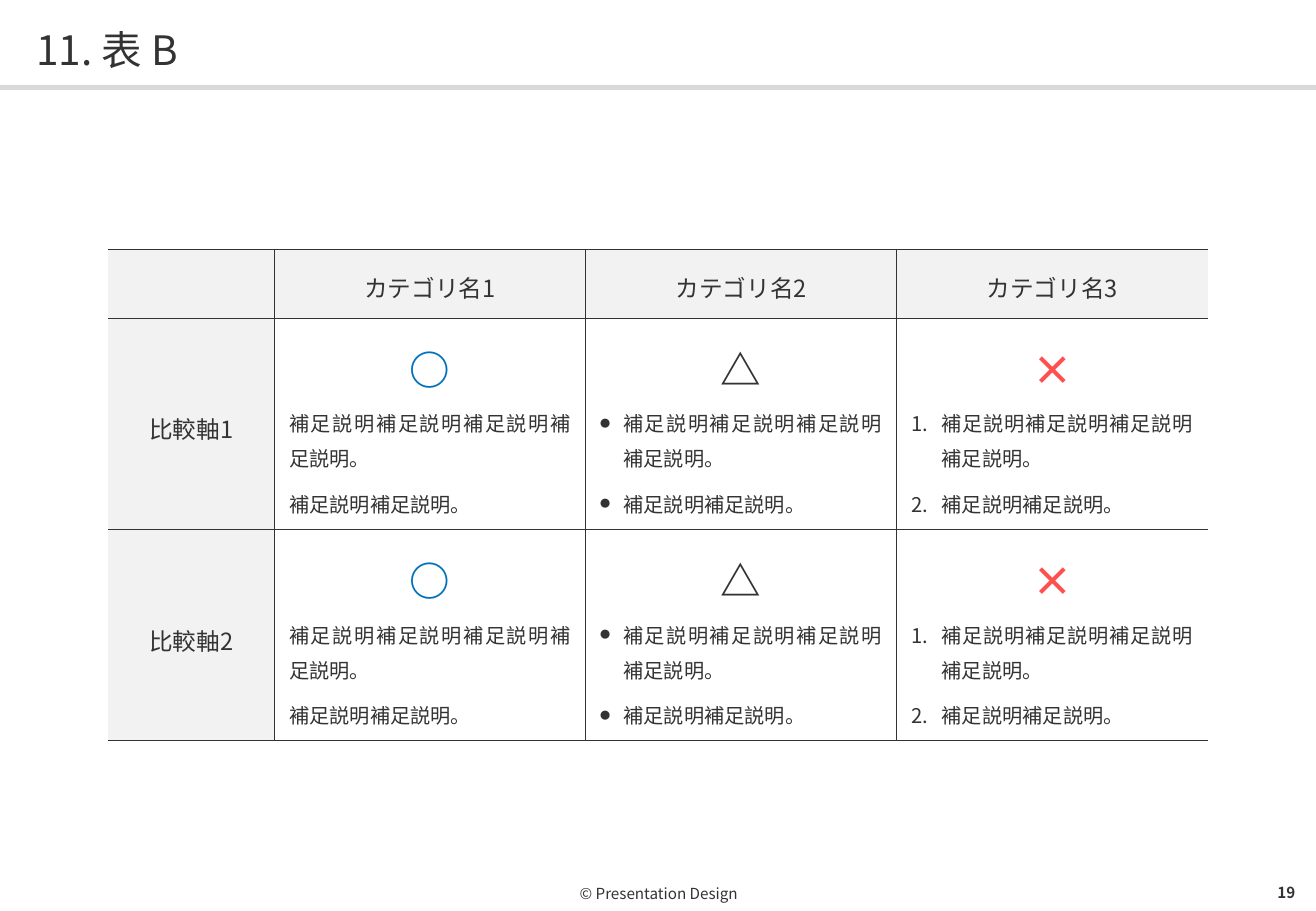
from lxml import etree
from pptx import Presentation
from pptx.dml.color import RGBColor
from pptx.enum import shapes, text
from pptx.oxml import ns
from pptx.util import Inches, Pt

FONT = "Noto Sans CJK JP"
INK, PALE, RULE = "333333", "F2F2F2", "D9D9D9"
ALIGN = text.PP_ALIGN
NOTES = ["補足説明補足説明補足説明補足説明。", "補足説明補足説明。"]
RATINGS = [("○", "0071BC", None), ("△", INK, "dot"), ("×", "FF5050", "number")]
COLUMN_WIDTHS = [1.37, 2.56, 2.56, 2.56]
ROW_HEIGHTS = [0.57, 1.74, 1.74]


def color(value):
    """Return the colour for a hex string."""
    return RGBColor.from_string(value)


def add_element(parent, tag, **attributes):
    """Append a DrawingML element to its parent."""
    return etree.SubElement(parent, ns.qn(tag), attributes)


def style_paragraph(paragraph, size, align, ink=INK, bold=False, spacing=1.0, after=0):
    """Set the font, alignment and spacing of a paragraph."""
    font = paragraph.font
    font.name, font.size, font.bold = FONT, Pt(size), bold
    font.color.rgb = color(ink)
    add_element(font._element, "a:ea", typeface=FONT)
    paragraph.alignment = align
    paragraph.line_spacing = spacing
    paragraph.space_after = Pt(after)


def add_bullet(paragraph, kind):
    """Give a paragraph a dot or a number with a hanging indent."""
    properties = paragraph._p.get_or_add_pPr()
    indent = Inches(0.19 if kind == "dot" else 0.25)
    properties.set("marL", str(indent))
    properties.set("indent", str(-indent))
    if kind == "dot":
        add_element(properties, "a:buSzPct", val="50000")
        add_element(properties, "a:buFont", typeface=FONT)
        add_element(properties, "a:buChar", char="●")
    else:
        add_element(properties, "a:buFont", typeface=FONT)
        add_element(properties, "a:buAutoNum", type="arabicPeriod")


def add_label(slide, box, words, size, align, **style):
    """Add a line of text without insets."""
    frame = slide.shapes.add_textbox(*map(Inches, box)).text_frame
    frame.word_wrap = True
    frame.vertical_anchor = text.MSO_ANCHOR.MIDDLE
    frame.margin_left = frame.margin_right = frame.margin_top = frame.margin_bottom = 0
    paragraph = frame.paragraphs[0]
    paragraph.text = words
    style_paragraph(paragraph, size, align, **style)


def add_title_rule(slide):
    """Add the grey bar below the title."""
    bar = slide.shapes.add_shape(
        shapes.MSO_SHAPE.RECTANGLE, 0, Inches(0.7), Inches(10.83), Inches(0.04))
    bar.shadow.inherit = False
    bar.fill.solid()
    bar.fill.fore_color.rgb = color(RULE)
    bar.line.fill.background()


def set_borders(cell, visible):
    """Draw the named sides of a cell and clear the others."""
    properties = cell._tc.get_or_add_tcPr()
    for side in "LRTB":
        line = add_element(properties, f"a:ln{side}", w=str(Pt(0.5)))
        if side in visible:
            fill = add_element(line, "a:solidFill")
            add_element(fill, "a:srgbClr", val=INK)
        else:
            add_element(line, "a:noFill")


def format_cell(cell, row, column):
    """Set the borders, fill and insets of a cell by its place."""
    left = "L" if column > 0 else ""
    right = "R" if column < len(COLUMN_WIDTHS) - 1 else ""
    set_borders(cell, "TB" + left + right)
    cell.margin_left = cell.margin_right = cell.margin_top = Inches(0.12)
    cell.margin_bottom = Inches(0.1)
    if row == 0 or column == 0:
        cell.fill.solid()
        cell.fill.fore_color.rgb = color(PALE)
    else:
        cell.fill.background()


def fill_heading(cell, words):
    """Write a row or column heading."""
    paragraph = cell.text_frame.paragraphs[0]
    paragraph.text = words
    style_paragraph(paragraph, 14, ALIGN.CENTER, spacing=1.2)


def fill_rating(cell, mark, ink, bullet):
    """Write a rating mark with its notes below."""
    frame = cell.text_frame
    paragraph = frame.paragraphs[0]
    paragraph.text = mark
    style_paragraph(paragraph, 24, ALIGN.CENTER, ink, True, 1.1, 3)
    for note in NOTES:
        paragraph = frame.add_paragraph()
        paragraph.text = note
        if bullet:
            add_bullet(paragraph, bullet)
        style_paragraph(paragraph, 12, ALIGN.JUSTIFY, spacing=1.2, after=6)


def add_comparison(slide):
    """Add the comparison table."""
    table = slide.shapes.add_table(
        len(ROW_HEIGHTS), len(COLUMN_WIDTHS), Inches(0.89), Inches(2.05),
        Inches(sum(COLUMN_WIDTHS)), Inches(sum(ROW_HEIGHTS))).table
    table.first_row = table.horz_banding = False
    for column, width in zip(table.columns, COLUMN_WIDTHS):
        column.width = Inches(width)
    for row, height in enumerate(ROW_HEIGHTS):
        table.rows[row].height = Inches(height)
        for column in range(len(COLUMN_WIDTHS)):
            format_cell(table.cell(row, column), row, column)
    for column, rating in enumerate(RATINGS, 1):
        fill_heading(table.cell(0, column), f"カテゴリ名{column}")
        for row in (1, 2):
            fill_rating(table.cell(row, column), *rating)
    for row in (1, 2):
        fill_heading(table.cell(row, 0), f"比較軸{row}")
        table.cell(row, 0).vertical_anchor = text.MSO_ANCHOR.MIDDLE


def main():
    """Build the slide and save it."""
    presentation = Presentation()
    presentation.slide_width, presentation.slide_height = Inches(10.83), Inches(7.5)
    slide = presentation.slides.add_slide(presentation.slide_layouts[6])
    add_title_rule(slide)
    add_label(slide, (0.89, 7.21, 9.06, 0.29), "© Presentation Design", 9, ALIGN.CENTER)
    add_label(slide, (10.14, 7.21, 0.52, 0.28), "19", 9, ALIGN.RIGHT, bold=True)
    add_label(slide, (0.3, 0.17, 10.24, 0.43), "11. 表 B", 24, ALIGN.LEFT, spacing=1.1)
    add_comparison(slide)
    presentation.save("out.pptx")


if __name__ == "__main__":
    main()
